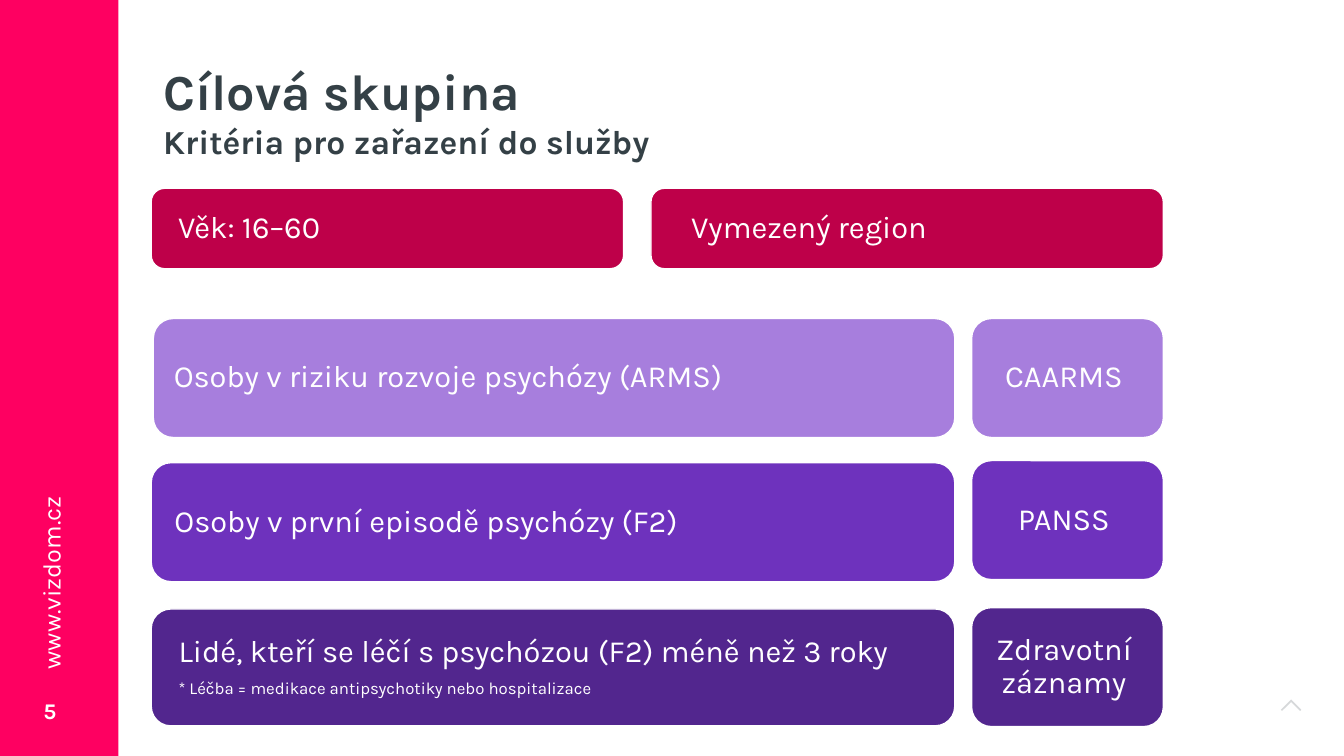
from lxml.etree import SubElement
from pptx import Presentation
from pptx.dml.color import RGBColor
from pptx.enum.shapes import MSO_SHAPE
from pptx.enum.text import MSO_ANCHOR, PP_ALIGN
from pptx.oxml.ns import qn
from pptx.util import Pt

WHITE = RGBColor(0xFF, 0xFF, 0xFF)
SLATE = RGBColor(0x34, 0x40, 0x46)
PINK = RGBColor(0xFE, 0x00, 0x61)
CRIMSON = RGBColor(0xBE, 0x00, 0x49)
LILAC = RGBColor(0xA7, 0x7E, 0xDD)
VIOLET = RGBColor(0x6E, 0x32, 0xBD)
INDIGO = RGBColor(0x52, 0x26, 0x8E)


def write(shape, lines, color=WHITE, bold=False, align=PP_ALIGN.LEFT,
          anchor=MSO_ANCHOR.TOP, margins=(7.2, 3.6, 7.2, 3.6),
          line_spacing=None, space_after=None):
    """Fill a shape with (text, size) lines; margins are left, top, right, bottom."""
    frame = shape.text_frame
    frame.word_wrap = True
    frame.vertical_anchor = anchor
    (frame.margin_left, frame.margin_top,
     frame.margin_right, frame.margin_bottom) = [Pt(m) for m in margins]
    for index, (text, size) in enumerate(lines):
        paragraph = frame.add_paragraph() if index else frame.paragraphs[0]
        paragraph.alignment = align
        if line_spacing is not None:
            paragraph.line_spacing = line_spacing
        if space_after is not None:
            paragraph.space_after = Pt(space_after)
        run = paragraph.add_run()
        run.text = text
        run.font.name = "Karla"
        run.font.size = Pt(size)
        run.font.bold = bold
        run.font.color.rgb = color


prs = Presentation()
prs.slide_width, prs.slide_height = Pt(960), Pt(540)
slide = prs.slides.add_slide(prs.slide_layouts[6])
shapes = slide.shapes

# Faint chevron in the corner, drawn in tenths of a point
chevron_builder = shapes.build_freeform(9223, 4996, scale=Pt(1) / 10)
chevron_builder.add_line_segments(
    [(9295, 5070), (9287, 5078), (9223, 5014), (9158, 5078), (9150, 5070)])
chevron = chevron_builder.convert_to_shape()
chevron.shadow.inherit = False
chevron.fill.solid()
chevron.fill.fore_color.rgb = SLATE
chevron.line.fill.background()
chevron_color = chevron.fill._xPr.find(".//" + qn("a:srgbClr"))
SubElement(chevron_color, qn("a:alpha"), val="20000")

# Side band with page number and web address
band = shapes.add_shape(MSO_SHAPE.RECTANGLE, 0, 0, Pt(84.5), Pt(540))
band.shadow.inherit = False
band.fill.solid()
band.fill.fore_color.rgb = PINK
band.line.fill.background()

page_number = shapes.add_textbox(Pt(24), Pt(486), Pt(36), Pt(43.5))
write(page_number, [("5", 16)], bold=True, anchor=MSO_ANCHOR.MIDDLE)

web_address = shapes.add_textbox(Pt(-49), Pt(385), Pt(171), Pt(29.5))
web_address.rotation = 270
write(web_address, [("www.vizdom.cz", 18)])

heading = shapes.add_textbox(Pt(109.5), Pt(39.5), Pt(667.5), Pt(80))
write(heading, [("Cílová skupina", 36), ("Kritéria pro zařazení do služby", 24)],
      color=SLATE, bold=True)

# Criteria cards: left, top, width, height, colour, left margin, lines
criteria = [
    (108, 134.5, 337.5, 57.5, CRIMSON, 16.5, [("Věk: 16–60", 22)]),
    (465, 134.5, 366, 57.5, CRIMSON, 26, [("Vymezený region", 22)]),
    (109.5, 227.5, 572.5, 85, LILAC, 10.5,
     [("Osoby v riziku rozvoje psychózy (ARMS)", 22)]),
    (108, 330.5, 574, 85, VIOLET, 12.5,
     [("Osoby v první episodě psychózy (F2)", 22)]),
    (108, 435, 574, 83.5, INDIGO, 15.5,
     [("Lidé, kteří se léčí s psychózou (F2) méně než 3 roky", 22),
      ("* Léčba = medikace antipsychotiky nebo hospitalizace", 12)]),
]
# Assessment cards on the right: top, colour, text
assessments = [(227.5, LILAC, "CAARMS"), (329, VIOLET, "PANSS"),
               (434, INDIGO, "Zdravotní záznamy")]

cards = [(*card, 6, PP_ALIGN.LEFT) for card in criteria]
cards += [(694, top, 137, 85, color, 2, [(text, 22)], 7, PP_ALIGN.CENTER)
          for top, color, text in assessments]

for left, top, width, height, color, margin_left, lines, margin_right, align in cards:
    card = shapes.add_shape(MSO_SHAPE.ROUNDED_RECTANGLE,
                            Pt(left), Pt(top), Pt(width), Pt(height))
    card.shadow.inherit = False
    card.fill.solid()
    card.fill.fore_color.rgb = color
    card.line.color.rgb = WHITE
    card.line.width = Pt(1)
    write(card, lines, align=align, anchor=MSO_ANCHOR.MIDDLE,
          margins=(margin_left, 6, margin_right, 6),
          line_spacing=0.9, space_after=7.7)

prs.save("out.pptx")
